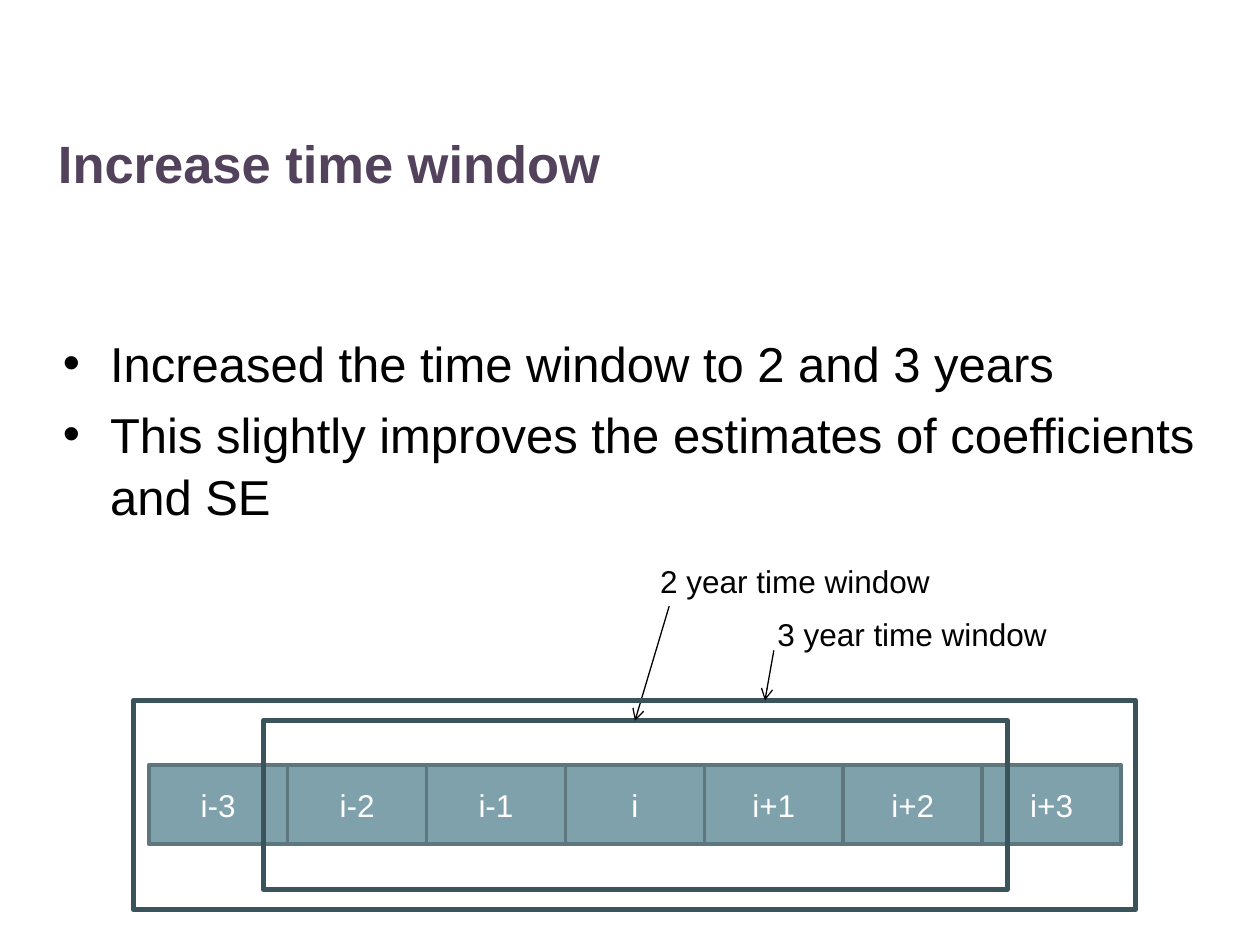
from lxml import etree
from pptx import Presentation
from pptx.dml.color import RGBColor
from pptx.enum.shapes import MSO_CONNECTOR, MSO_SHAPE
from pptx.enum.text import MSO_ANCHOR, PP_ALIGN
from pptx.oxml.ns import qn
from pptx.util import Cm, Pt

RECT = MSO_SHAPE.RECTANGLE
LINE = MSO_CONNECTOR.STRAIGHT
TOP, MIDDLE = MSO_ANCHOR.TOP, MSO_ANCHOR.MIDDLE
LEFT, CENTER = PP_ALIGN.LEFT, PP_ALIGN.CENTER

PLUM = RGBColor(0x52, 0x42, 0x5B)
BLACK = RGBColor(0, 0, 0)
WHITE = RGBColor(0xFF, 0xFF, 0xFF)
TEAL = RGBColor(0x7F, 0xA1, 0xAC)
SLATE = RGBColor(0x5E, 0x77, 0x7F)
DARK = RGBColor(0x3B, 0x53, 0x5B)

TITLE = {"size": Pt(30), "bold": True}
BODY = {"size": Pt(28)}
LABEL = {"size": Pt(18)}


def apply(item, values):
    for name, value in values.items():
        setattr(item, name, value)


def style(para, font, color, layout):
    apply(para, layout)
    apply(para.font, {"name": "Arial", **font})
    para.font.color.rgb = color


def add_text(slide, box, text, font, color, wrap=True):
    frame = slide.shapes.add_textbox(*map(Cm, box)).text_frame
    apply(frame, {"word_wrap": wrap, "vertical_anchor": TOP})
    frame.text = text
    style(frame.paragraphs[0], font, color, {"alignment": LEFT})


def add_list(slide, box, items):
    frame = slide.shapes.add_textbox(*map(Cm, box)).text_frame
    frame.word_wrap = True
    frame.text = "\n".join(items)
    for index, para in enumerate(frame.paragraphs):
        props = para._p.get_or_add_pPr()
        props.set("marL", str(Cm(0.95)))
        props.set("indent", str(Cm(-0.95)))
        etree.SubElement(props, qn("a:buFont"), typeface="Arial")
        etree.SubElement(props, qn("a:buChar"), char="•")
        layout = {"line_spacing": 1.05}
        if index:
            layout["space_before"] = Pt(5.6)
        style(para, BODY, BLACK, layout)


def add_rect(slide, box, edge, width):
    shape = slide.shapes.add_shape(RECT, *map(Cm, box))
    shape.shadow.inherit = False
    shape.fill.background()
    shape.line.color.rgb = edge
    shape.line.width = Pt(width)
    return shape


def add_cell(slide, box, text):
    shape = add_rect(slide, box, SLATE, 2)
    shape.fill.solid()
    shape.fill.fore_color.rgb = TEAL
    frame = shape.text_frame
    frame.vertical_anchor = MIDDLE
    frame.text = text
    style(frame.paragraphs[0], LABEL, WHITE, {"alignment": CENTER})


def add_arrow(slide, ends):
    arrow = slide.shapes.add_connector(LINE, *map(Cm, ends))
    arrow.line.color.rgb = BLACK
    arrow.line.width = Pt(0.75)
    edge = arrow.line._get_or_add_ln()
    etree.SubElement(edge, qn("a:tailEnd"), type="arrow")
    etree.SubElement(arrow._element.spPr, qn("a:effectLst"))


def main():
    deck = Presentation()
    deck.slide_width, deck.slide_height = Cm(25.4), Cm(19.05)
    slide = deck.slides.add_slide(deck.slide_layouts[6])

    add_text(slide, (0.92, 2.52, 23.58, 3.6), "Increase time window", TITLE, PLUM)
    add_list(slide, (1.02, 6.53, 23.58, 4.2), [
        "Increased the time window to 2 and 3 years",
        "This slightly improves the estimates of coefficients and SE",
    ])

    for step in range(-3, 4):
        text = f"i{step:+d}" if step else "i"
        add_cell(slide, (3 + 2.8 * (step + 3), 15.42, 2.8, 1.6), text)

    windows = [
        (2, (5.31, 14.53, 15, 3.4), (13.06, 11.2), (13.49, 12.22, 12.8, 14.53)),
        (3, (2.69, 14.12, 20.2, 4.22), (15.42, 12.27), (15.6, 13.11, 15.42, 14.12)),
    ]
    for years, box, spot, ends in windows:
        add_rect(slide, box, DARK, 3)
        add_text(slide, (*spot, 6, 1.02), f"{years} year time window",
                 LABEL, BLACK, wrap=False)
        add_arrow(slide, ends)

    deck.save("out.pptx")


if __name__ == "__main__":
    main()
